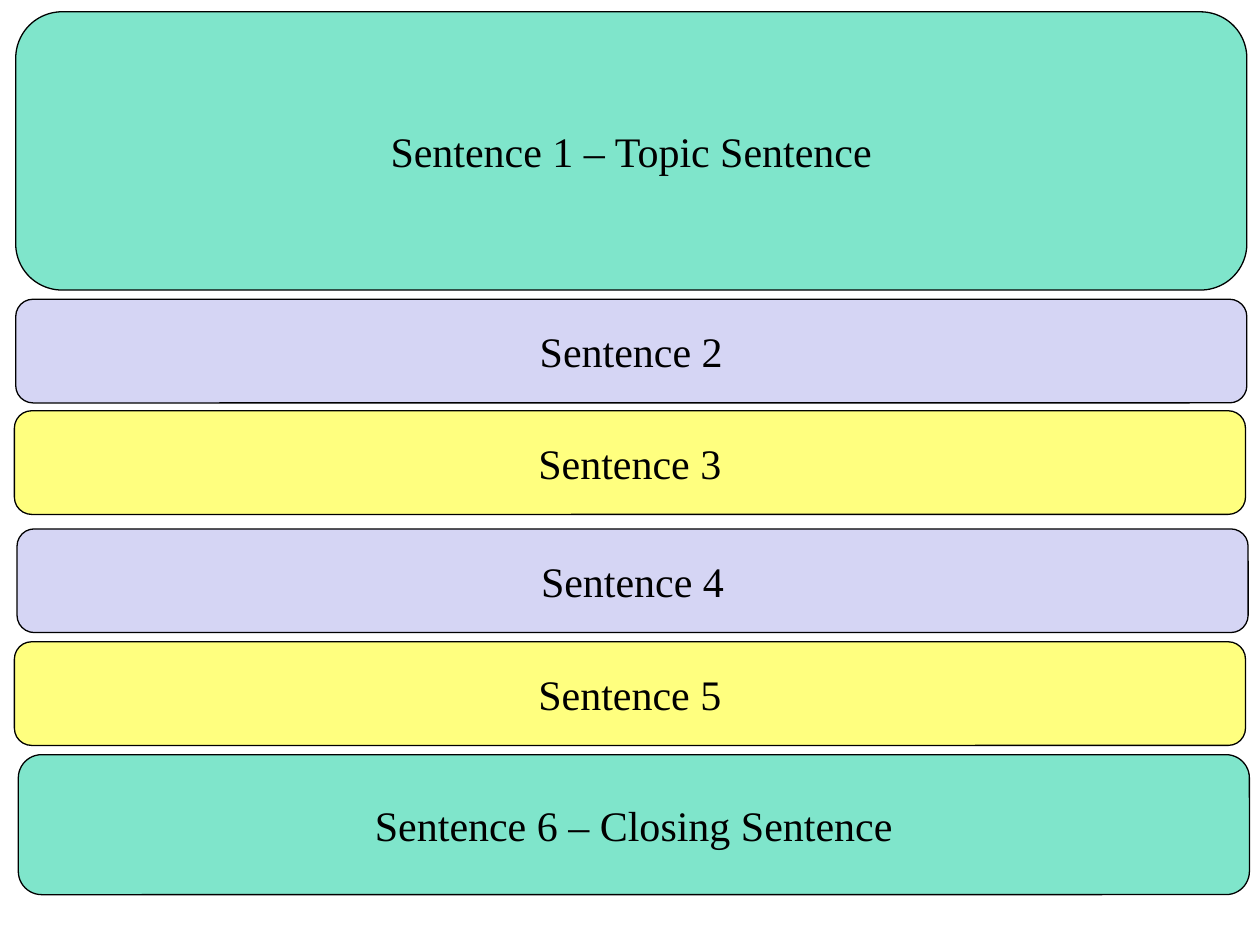
from lxml import etree
from pptx import Presentation
from pptx.dml.color import RGBColor
from pptx.enum.shapes import MSO_SHAPE
from pptx.enum.text import MSO_ANCHOR, PP_ALIGN
from pptx.oxml.ns import qn
from pptx.util import Pt

ROUNDED = MSO_SHAPE.ROUNDED_RECTANGLE
MIDDLE = MSO_ANCHOR.MIDDLE
CENTER = PP_ALIGN.CENTER
GREEN = RGBColor(0x00, 0xCC, 0x99)
LILAC = RGBColor(0xAD, 0xAD, 0xEB)
YELLOW = RGBColor(0xFF, 0xFF, 0x00)
BLACK = RGBColor(0x00, 0x00, 0x00)

BAR_WIDTH = 703.5
BAR_HEIGHT = 59.25

prs = Presentation()
prs.slide_width, prs.slide_height = Pt(720), Pt(540)
s = prs.slides.add_slide(prs.slide_layouts[6])

sentences = [
    ("Sentence 1 – Topic Sentence", 9, 6.75, 159, GREEN),
    ("Sentence 2", 9, 171, BAR_HEIGHT, LILAC),
    ("Sentence 3", 8.25, 234.75, BAR_HEIGHT, YELLOW),
    ("Sentence 4", 9.75, 302.25, BAR_HEIGHT, LILAC),
    ("Sentence 5", 8.25, 366.75, BAR_HEIGHT, YELLOW),
    ("Sentence 6 – Closing Sentence", 10.5, 431.25, 80, GREEN),
]

for text, left, top, height, color in sentences:
    sp = s.shapes.add_shape(ROUNDED, Pt(left), Pt(top), Pt(BAR_WIDTH), Pt(height))
    sp.shadow.inherit = False
    sp.fill.solid()
    sp.fill.fore_color.rgb = color
    rgb = sp._element.spPr.find(qn("a:solidFill")).find(qn("a:srgbClr"))
    etree.SubElement(rgb, qn("a:alpha"), val="50000")
    sp.line.color.rgb = BLACK
    sp.line.width = Pt(0.75)
    tf = sp.text_frame
    tf.word_wrap = True
    tf.vertical_anchor = MIDDLE
    p = tf.paragraphs[0]
    p.alignment = CENTER
    r = p.add_run()
    r.text = text
    r.font.name = "Times New Roman"
    r.font.size = Pt(24)
    r.font.color.rgb = BLACK

prs.save("out.pptx")
